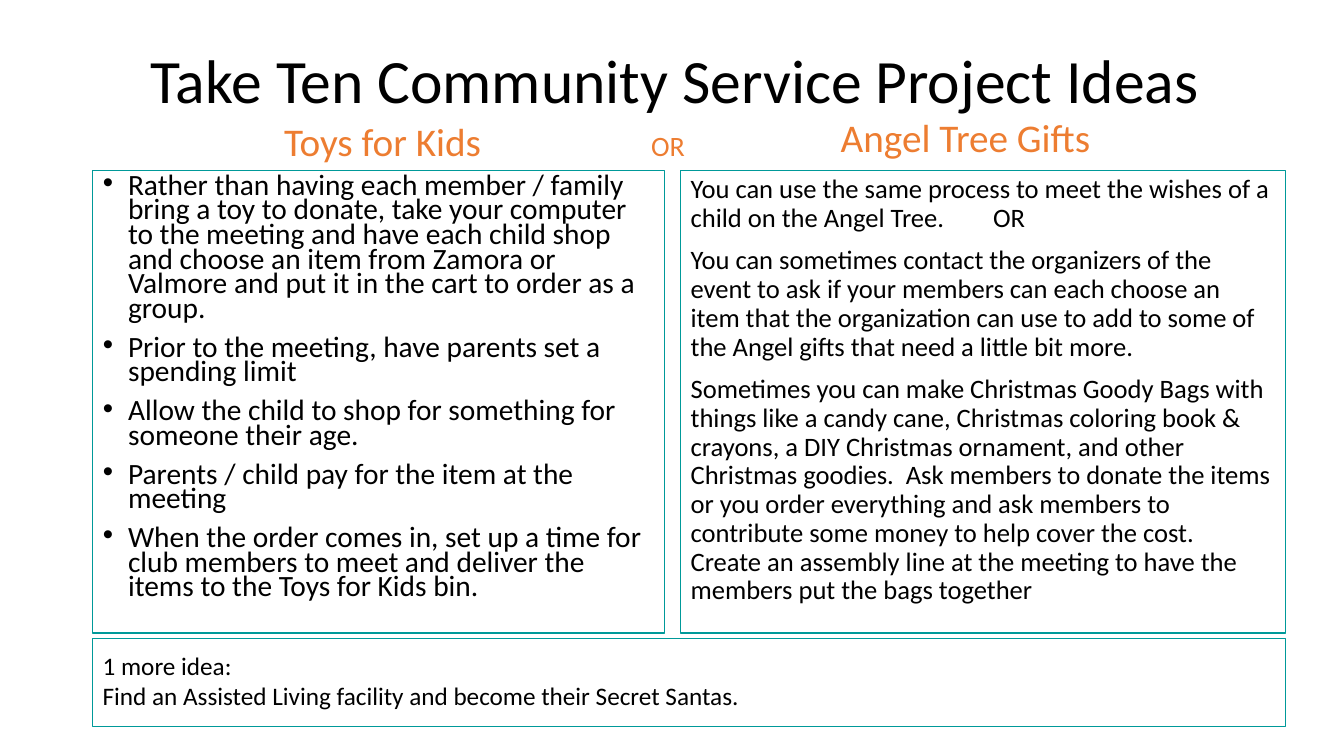
"""Build the slide of community service project ideas."""
from dataclasses import dataclass

from lxml.etree import SubElement
from pptx import Presentation
from pptx.dml.color import RGBColor as Rgb
from pptx.enum.shapes import MSO_SHAPE as Preset
from pptx.enum.text import MSO_ANCHOR as Anchor, MSO_AUTO_SIZE as Fit, PP_ALIGN as Align
from pptx.oxml.ns import qn
from pptx.util import Inches, Pt


@dataclass(frozen=True)
class Theme:
    """Hold the colours, font and type sizes."""
    font: str = "Calibri"
    ink: Rgb = Rgb(0x00, 0x00, 0x00)
    accent: Rgb = Rgb(0xED, 0x7D, 0x31)
    border: Rgb = Rgb(0x00, 0x99, 0x99)
    border_width: Pt = Pt(0.75)
    title: Pt = Pt(44)
    heading: Pt = Pt(28)
    steps: Pt = Pt(21)
    joiner: Pt = Pt(20)
    prose: Pt = Pt(19)
    note: Pt = Pt(18)


def apply(target, values):
    """Set each named attribute on the target."""
    for name, value in values.items():
        setattr(target, name, value)


class IdeaSlide:
    """Draw styled elements on one slide."""

    def __init__(self, slide, theme):
        """Keep the slide and its theme."""
        self.slide = slide
        self.theme = theme

    def place(self, element, box):
        """Move an element to left, top, width and height in inches."""
        apply(element, dict(zip(("left", "top", "width", "height"), map(Inches, box))))

    def fill_text(self, frame, lines, size, color, **layout):
        """Fill a text frame with one styled paragraph per line."""
        frame.text = "\n".join(lines)
        apply(frame, {"word_wrap": True, "auto_size": Fit.NONE})
        for paragraph in frame.paragraphs:
            apply(paragraph, layout)
            for run in paragraph.runs:
                apply(run.font, {"name": self.theme.font, "size": size})
                run.font.color.rgb = color

    def outline(self, element):
        """Give an element the thin border."""
        element.line.color.rgb = self.theme.border
        element.line.width = self.theme.border_width

    def title(self, text, box):
        """Fill the title placeholder."""
        heading = self.slide.shapes.title
        self.place(heading, box)
        self.fill_text(heading.text_frame, [text], self.theme.title, self.theme.ink,
                       alignment=Align.CENTER, line_spacing=0.9)
        heading.text_frame.vertical_anchor = Anchor.MIDDLE

    def body(self, index, lines, box, size, spacing, bullet=None):
        """Fill a bordered body placeholder, with or without bullets."""
        column = self.slide.placeholders[index]
        self.place(column, box)
        self.outline(column)
        self.fill_text(column.text_frame, lines, size, self.theme.ink,
                       alignment=Align.LEFT, line_spacing=spacing, space_before=Pt(10))
        column.text_frame.vertical_anchor = Anchor.TOP
        indent = Inches(0.25) if bullet else 0
        for paragraph in column.text_frame.paragraphs:
            properties = paragraph._p.get_or_add_pPr()
            properties.set("marL", str(indent))
            properties.set("indent", str(-indent))
            if bullet:
                SubElement(properties, qn("a:buFont"), typeface="Arial")
                SubElement(properties, qn("a:buChar"), char=bullet)
            else:
                SubElement(properties, qn("a:buNone"))

    def label(self, lines, box, size, color, align=Align.LEFT):
        """Add a text box."""
        caption = self.slide.shapes.add_textbox(*map(Inches, box))
        self.fill_text(caption.text_frame, lines, size, color, alignment=align)

    def panel(self, box):
        """Add an empty bordered rectangle."""
        frame = self.slide.shapes.add_shape(Preset.RECTANGLE, *map(Inches, box))
        frame.fill.background()
        frame.shadow.inherit = False
        self.outline(frame)


TOY_STEPS = [
    "Rather than having each member / family bring a toy to donate, take your computer "
    "to the meeting and have each child shop and choose an item from Zamora or Valmore "
    "and put it in the cart to order as a group.",
    "Prior to the meeting, have parents set a spending limit",
    "Allow the child to shop for something for someone their age.",
    "Parents / child pay for the item at the meeting",
    "When the order comes in, set up a time for club members to meet and deliver the "
    "items to the Toys for Kids bin.",
]
ANGEL_IDEAS = [
    "You can use the same process to meet the wishes of a child on the Angel Tree.\tOR",
    "You can sometimes contact the organizers of the event to ask if your members can "
    "each choose an item that the organization can use to add to some of the Angel gifts "
    "that need a little bit more.",
    "Sometimes you can make Christmas Goody Bags with things like a candy cane, Christmas "
    "coloring book & crayons, a DIY Christmas ornament, and other Christmas goodies.  Ask "
    "members to donate the items or you order everything and ask members to contribute "
    "some money to help cover the cost.  Create an assembly line at the meeting to have "
    "the members put the bags together",
]
EXTRA_IDEA = [
    "1 more idea:",
    "Find an Assisted Living facility and become their Secret Santas.",
]


def main():
    """Build and save the presentation."""
    deck = Presentation()
    apply(deck, {"slide_width": Inches(13.33), "slide_height": Inches(7.5)})
    theme = Theme()
    ideas = IdeaSlide(deck.slides.add_slide(deck.slide_layouts[3]), theme)

    left, right, top, height = 0.92, 6.75, 1.69, 4.59
    toy_width, angel_width = 5.67, 6
    full_width = right + angel_width - left

    ideas.title("Take Ten Community Service Project Ideas", (0.95, 0.3, 11.5, 1.06))
    ideas.body(1, TOY_STEPS, (left, top, toy_width, height), theme.steps, 0.7, "•")
    ideas.body(2, ANGEL_IDEAS, (right, top, angel_width, height), theme.prose, 0.9)
    ideas.label(["Toys for Kids"], (left + 0.04, 1.11, toy_width, 0.57),
                theme.heading, theme.accent, Align.CENTER)
    ideas.label(["Angel Tree Gifts"], (right, 1.08, 5.65, 0.57),
                theme.heading, theme.accent, Align.CENTER)
    ideas.label(["OR"], (6.36, 1.23, 0.57, 0.44), theme.joiner, theme.accent)
    ideas.panel((left, 6.33, full_width, 0.88))
    ideas.label(EXTRA_IDEA, (left, 6.4, full_width, 0.71), theme.note, theme.ink)
    deck.save("out.pptx")


if __name__ == "__main__":
    main()
